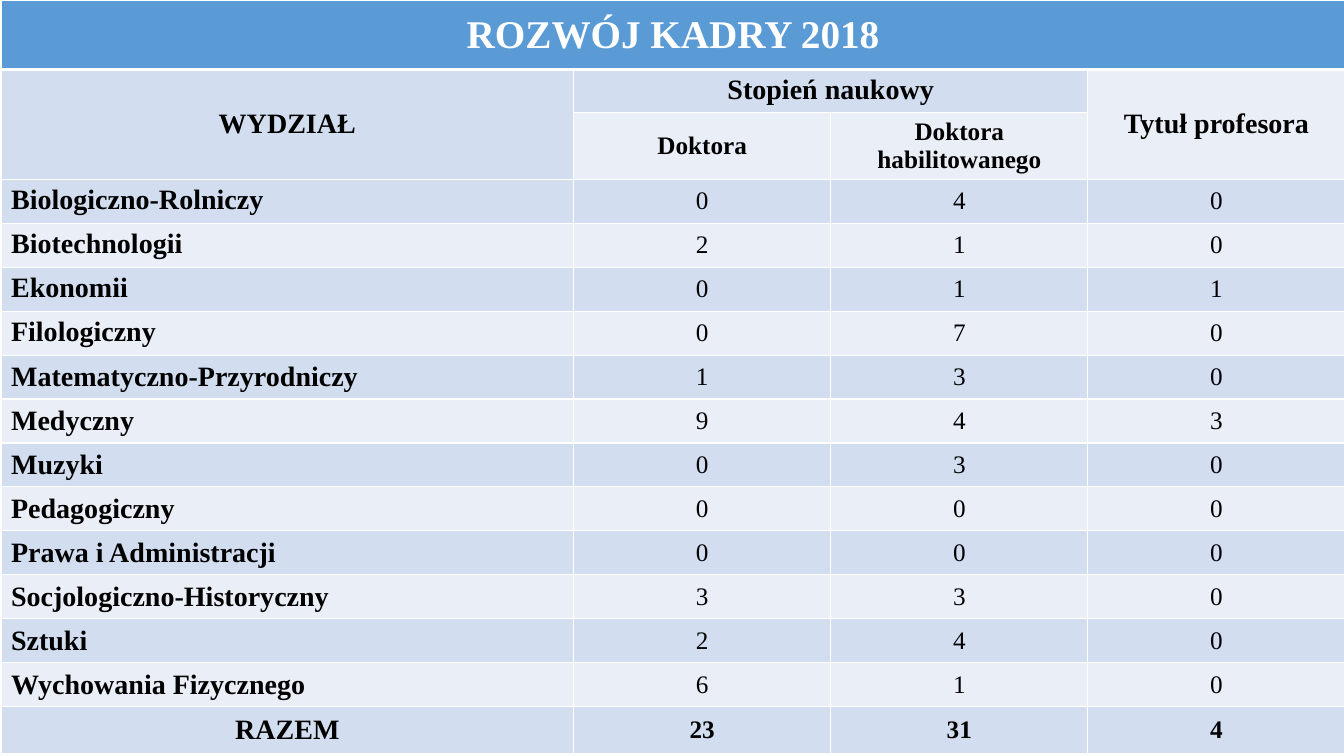
"""Build a slide with the table of academic staff development in 2018."""
import lxml.etree
import pptx
import pptx.dml.color
import pptx.enum.text
import pptx.oxml.ns
import pptx.util

Inches = pptx.util.Inches
CENTER = pptx.enum.text.PP_ALIGN.CENTER
LEFT = pptx.enum.text.PP_ALIGN.LEFT
TOP = pptx.enum.text.MSO_ANCHOR.TOP
MIDDLE = pptx.enum.text.MSO_ANCHOR.MIDDLE
BLUE, DARK_BAND, LIGHT_BAND = "5B9BD5", "D2DEEF", "EAEFF7"


def color(value):
    return pptx.dml.color.RGBColor.from_string(value)


def add_borders(cell, widths):
    properties = cell._tc.get_or_add_tcPr()
    for index, (side, width) in enumerate(widths.items()):
        line = lxml.etree.Element(pptx.oxml.ns.qn(f"a:ln{side}"), w=str(pptx.util.Pt(width)))
        fill = lxml.etree.SubElement(line, pptx.oxml.ns.qn("a:solidFill"))
        lxml.etree.SubElement(fill, pptx.oxml.ns.qn("a:srgbClr"), val="FFFFFF")
        properties.insert(index, line)


faculties = [
    ("Biologiczno-Rolniczy", 0, 4, 0),
    ("Biotechnologii", 2, 1, 0),
    ("Ekonomii", 0, 1, 1),
    ("Filologiczny", 0, 7, 0),
    ("Matematyczno-Przyrodniczy", 1, 3, 0),
    ("Medyczny", 9, 4, 3),
    ("Muzyki", 0, 3, 0),
    ("Pedagogiczny", 0, 0, 0),
    ("Prawa i Administracji", 0, 0, 0),
    ("Socjologiczno-Historyczny", 3, 3, 0),
    ("Sztuki", 2, 4, 0),
    ("Wychowania Fizycznego", 6, 1, 0),
]
rows = [
    ("ROZWÓJ KADRY 2018", "", "", ""),
    ("WYDZIAŁ", "Stopień naukowy", "", "Tytuł profesora"),
    ("", "Doktora", "Doktora habilitowanego", ""),
    *faculties,
    ("RAZEM", 23, 31, 4),
]
faculty_height = 5.23 / len(faculties)
row_heights = [0.69, 0.43, 0.66] + [faculty_height] * len(faculties) + [0.47]
column_widths = [5.68, 2.55, 2.55, 2.55]
total_row = len(rows) - 1

deck = pptx.Presentation()
deck.slide_width = Inches(13.33)
deck.slide_height = Inches(7.5)
page = deck.slides.add_slide(deck.slide_layouts[6])

frame = page.shapes.add_table(
    len(rows), len(column_widths), Inches(0.01), Inches(0),
    Inches(13.32), Inches(sum(row_heights)))
table = frame.table
for column, width in zip(table.columns, column_widths):
    column.width = Inches(width)
for row, height in zip(table.rows, row_heights):
    row.height = Inches(height)

for first, last in [((0, 0), (0, 3)), ((1, 0), (2, 0)), ((1, 1), (1, 2)), ((1, 3), (2, 3))]:
    table.cell(*first).merge(table.cell(*last))

for row_index, values in enumerate(rows):
    is_faculty = 3 <= row_index < total_row
    for column_index, value in enumerate(values):
        cell = table.cell(row_index, column_index)
        is_name = is_faculty and column_index == 0
        if row_index == 0:
            fill, size = BLUE, 28
        else:
            fill = DARK_BAND if row_index % 2 else LIGHT_BAND
            size = 20 if row_index == 1 or column_index == 0 else 18
        if (row_index, column_index) == (1, 3):
            fill = LIGHT_BAND
        cell.fill.solid()
        cell.fill.fore_color.rgb = color(fill)
        add_borders(cell, {
            "L": 1, "R": 1,
            "T": 3 if row_index == 1 else 1,
            "B": 3 if row_index == 0 else 1})
        if cell.is_spanned:
            continue
        top_aligned = (row_index, column_index) == (1, 1) or (is_name and row_index < 7)
        cell.vertical_anchor = TOP if top_aligned else MIDDLE
        para = cell.text_frame.paragraphs[0]
        para.alignment = LEFT if is_name else CENTER
        span = para.add_run()
        span.text = str(value)
        span.font.name = "Times New Roman"
        span.font.size = pptx.util.Pt(size)
        span.font.bold = is_name or not is_faculty
        span.font.color.rgb = color("FFFFFF" if row_index == 0 else "000000")

deck.save("out.pptx")
